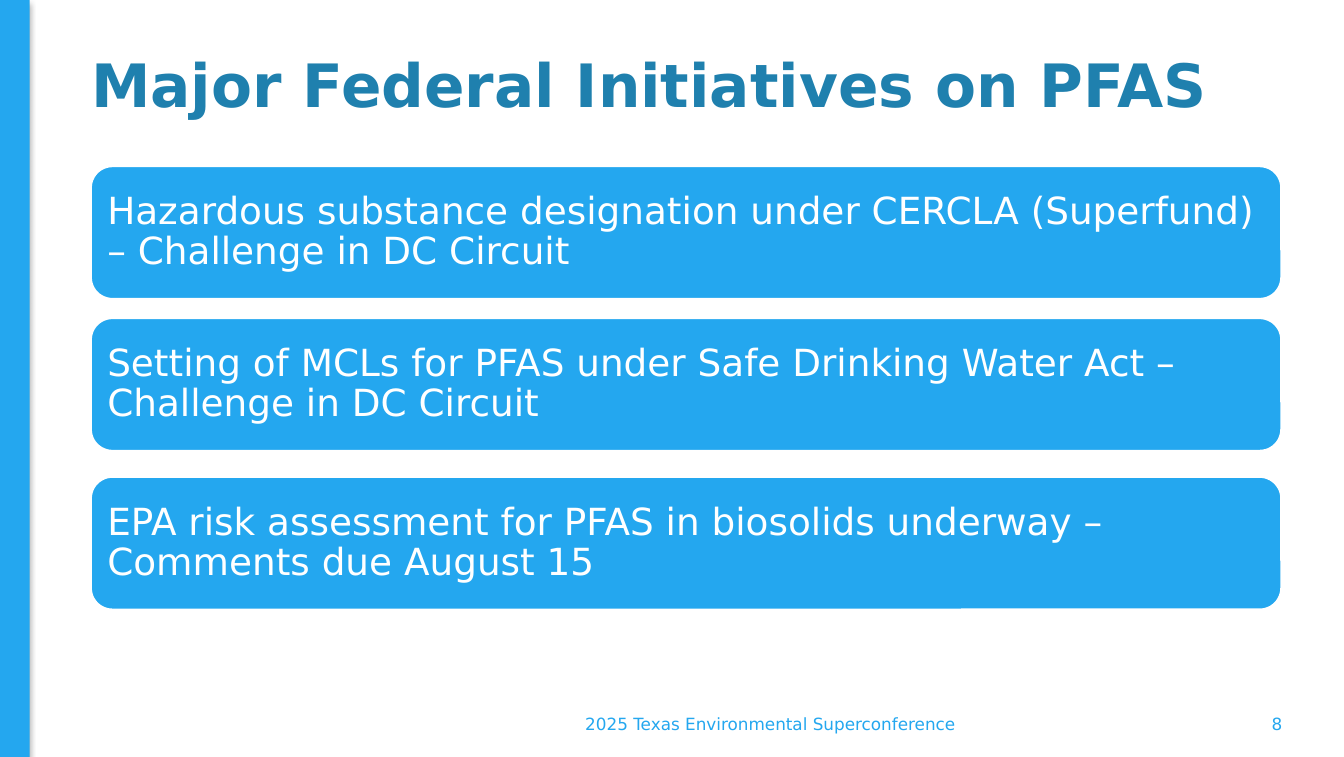
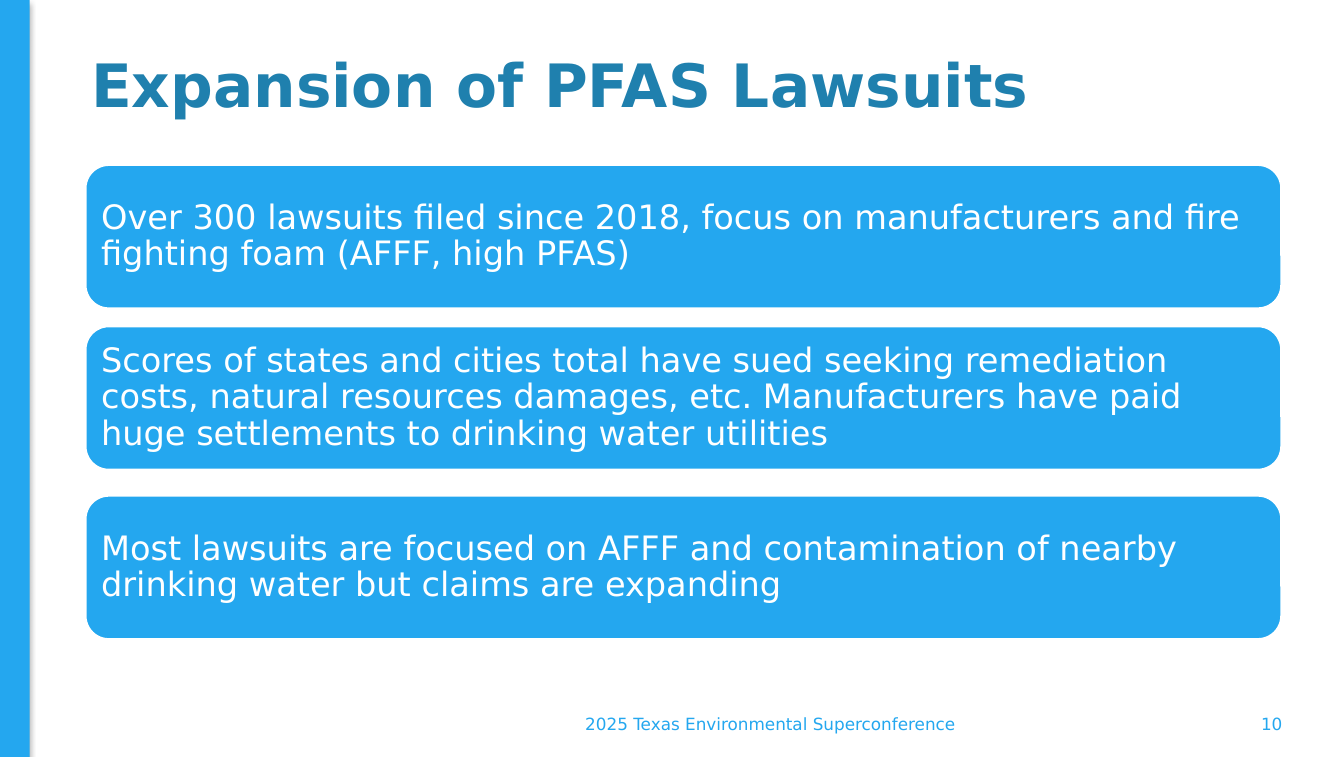
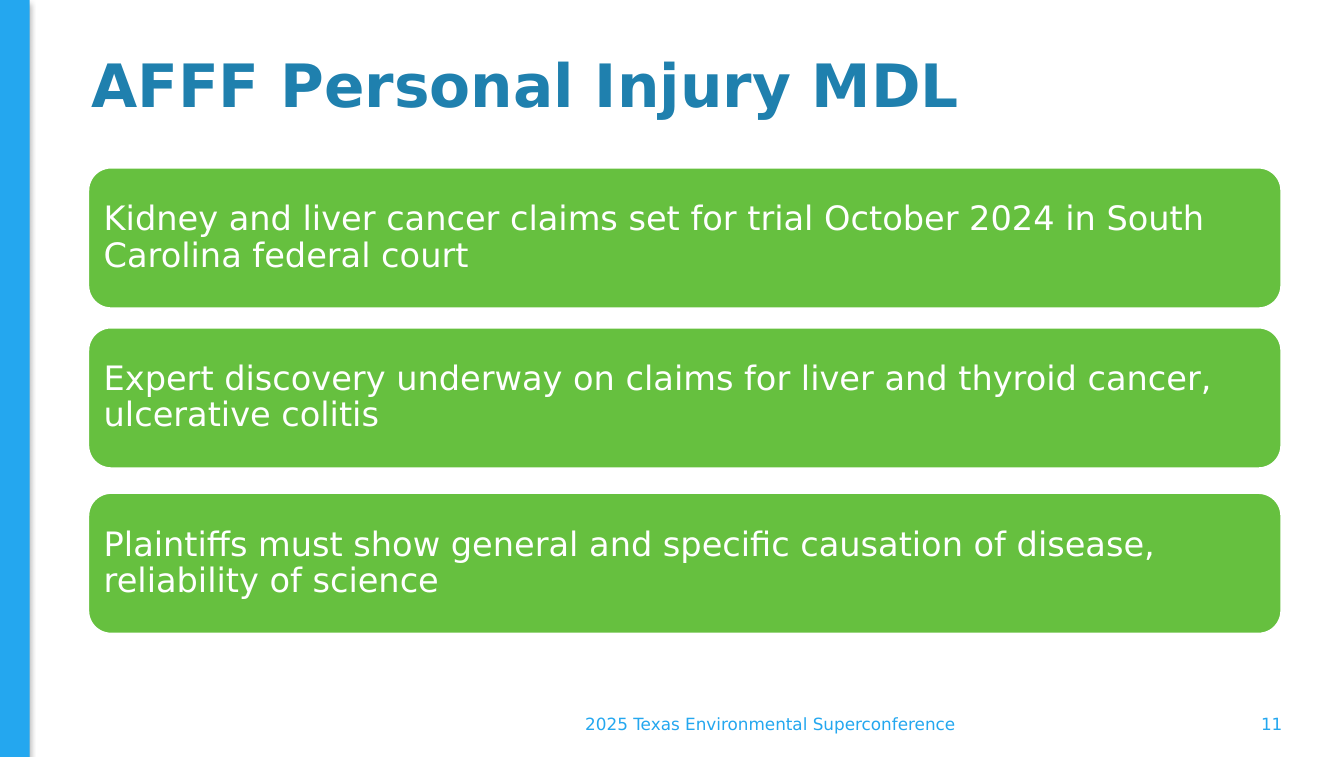
"""Builds three PFAS litigation slides that share one style."""
from lxml.etree import SubElement
from pptx import Presentation
from pptx.dml.color import RGBColor
from pptx.enum.shapes import MSO_SHAPE as Shape
from pptx.enum.text import MSO_ANCHOR as Anchor, PP_ALIGN as Align
from pptx.oxml.ns import qn
from pptx.util import Inches, Pt

COLORS = {
    "blue": "24A7EF",
    "green": "66C03F",
    "title": "1F80AE",
    "white": "FFFFFF",
    "shadow": "000000",
}
FONT = "DejaVu Sans"
COLUMNS, ROWS = 100, 56.3
CELL = Inches(0.1)
RIGHT_EDGE = 95.4
FOOTER = "2025 Texas Environmental Superconference"

SLIDES = [
    {
        "title": "Major Federal Initiatives on PFAS",
        "number": "8",
        "color": "blue",
        "size": 20,
        "left": 6.7,
        "height": 10,
        "inset": 0.8,
        "cards": [
            (12.3, "Hazardous substance designation under CERCLA (Superfund) "
                   "– Challenge in DC Circuit"),
            (23.6, "Setting of MCLs for PFAS under Safe Drinking Water Act – "
                   "Challenge in DC Circuit"),
            (35.4, "EPA risk assessment for PFAS in biosolids underway – "
                   "Comments due August 15"),
        ],
    },
    {
        "title": "Expansion of PFAS Lawsuits",
        "number": "10",
        "color": "blue",
        "size": 18,
        "left": 6.3,
        "height": 10.8,
        "inset": 0.7,
        "cards": [
            (12.2, "Over 300 lawsuits filed since 2018, focus on manufacturers "
                   "and fire fighting foam (AFFF, high PFAS)"),
            (24.2, "Scores of states and cities total have sued seeking "
                   "remediation costs, natural resources damages, etc. "
                   "Manufacturers have paid huge settlements to drinking "
                   "water utilities"),
            (36.8, "Most lawsuits are focused on AFFF and contamination of "
                   "nearby drinking water but claims are expanding"),
        ],
    },
    {
        "title": "AFFF Personal Injury MDL",
        "number": "11",
        "color": "green",
        "size": 18,
        "left": 6.5,
        "height": 10.6,
        "inset": 0.7,
        "cards": [
            (12.4, "Kidney and liver cancer claims set for trial October 2024 "
                   "in South Carolina federal court"),
            (24.3, "Expert discovery underway on claims for liver and thyroid "
                   "cancer, ulcerative colitis"),
            (36.6, "Plaintiffs must show general and specific causation of "
                   "disease, reliability of science"),
        ],
    },
]


def cells(*counts):
    """Turn counts of grid cells into lengths."""
    return [round(count * CELL) for count in counts]


class Deck:
    """Holds the style and the current slide."""

    def __init__(self):
        """Start an empty presentation on the grid."""
        self.presentation = Presentation()
        size = cells(COLUMNS, ROWS)
        self.presentation.slide_width, self.presentation.slide_height = size
        self.slide = None

    def color(self, name):
        """Look up a colour of the style."""
        return RGBColor.from_string(COLORS[name])

    def new_slide(self):
        """Add a blank slide with the side band."""
        layout = self.presentation.slide_layouts[6]
        self.slide = self.presentation.slides.add_slide(layout)
        band = self.box(Shape.RECTANGLE, (0, 0, 2.2, ROWS), "blue")
        band.line.fill.background()
        self.cast_shadow(band)

    def box(self, kind, place, fill):
        """Add a filled shape without a shadow."""
        shape = self.slide.shapes.add_shape(kind, *cells(*place))
        shape.shadow.inherit = False
        shape.fill.solid()
        shape.fill.fore_color.rgb = self.color(fill)
        return shape

    def cast_shadow(self, shape):
        """Give a shape a soft shadow below it."""
        effects = shape._element.spPr.find(qn("a:effectLst"))
        shadow = SubElement(effects, qn("a:outerShdw"), blurRad=str(Pt(3.1)),
                            dist=str(Pt(1.8)), dir="5400000", rotWithShape="0")
        tint = SubElement(shadow, qn("a:srgbClr"), val=COLORS["shadow"])
        SubElement(tint, qn("a:alpha"), val="35000")

    def set_text(self, shape, text, color, align=Align.LEFT, spacing=1.0,
                 **font):
        """Put one paragraph, centred vertically, into a shape."""
        frame = shape.text_frame
        frame.word_wrap = True
        frame.vertical_anchor = Anchor.MIDDLE
        paragraph = frame.paragraphs[0]
        paragraph.text = text
        paragraph.alignment = align
        paragraph.line_spacing = spacing
        for name, value in {"name": FONT, **font}.items():
            setattr(paragraph.runs[0].font, name, value)
        paragraph.runs[0].font.color.rgb = self.color(color)

    def label(self, place, text, color, **style):
        """Add a text box."""
        shape = self.slide.shapes.add_textbox(*cells(*place))
        self.set_text(shape, text, color, **style)

    def title(self, text):
        """Add the slide title."""
        self.label((5.8, 2, 89.6, 8.5), text, "title", size=Pt(32), bold=True)

    def card(self, place, text, fill, size, inset):
        """Add a rounded card with its text."""
        shape = self.box(Shape.ROUNDED_RECTANGLE, place, fill)
        shape.line.color.rgb = self.color("white")
        shape.line.width = Pt(2)
        for side in ("left", "top", "right", "bottom"):
            setattr(shape.text_frame, f"margin_{side}", cells(inset)[0])
        self.set_text(shape, text, "white", spacing=0.9, size=Pt(size))

    def footer(self, number):
        """Add the slide number and the event name."""
        self.label((86.3, 52.8, 10.1, 2), number, "blue",
                   align=Align.RIGHT, size=Pt(9))
        self.label((23.2, 52.3, 68.2, 3), FOOTER, "blue",
                   align=Align.CENTER, size=Pt(9))


def main():
    """Build every slide and save the file."""
    deck = Deck()
    for content in SLIDES:
        deck.new_slide()
        deck.title(content["title"])
        left = content["left"]
        for top, text in content["cards"]:
            place = (left, top, RIGHT_EDGE - left, content["height"])
            deck.card(place, text, content["color"], content["size"],
                      content["inset"])
        deck.footer(content["number"])
    deck.presentation.save("out.pptx")


if __name__ == "__main__":
    main()
